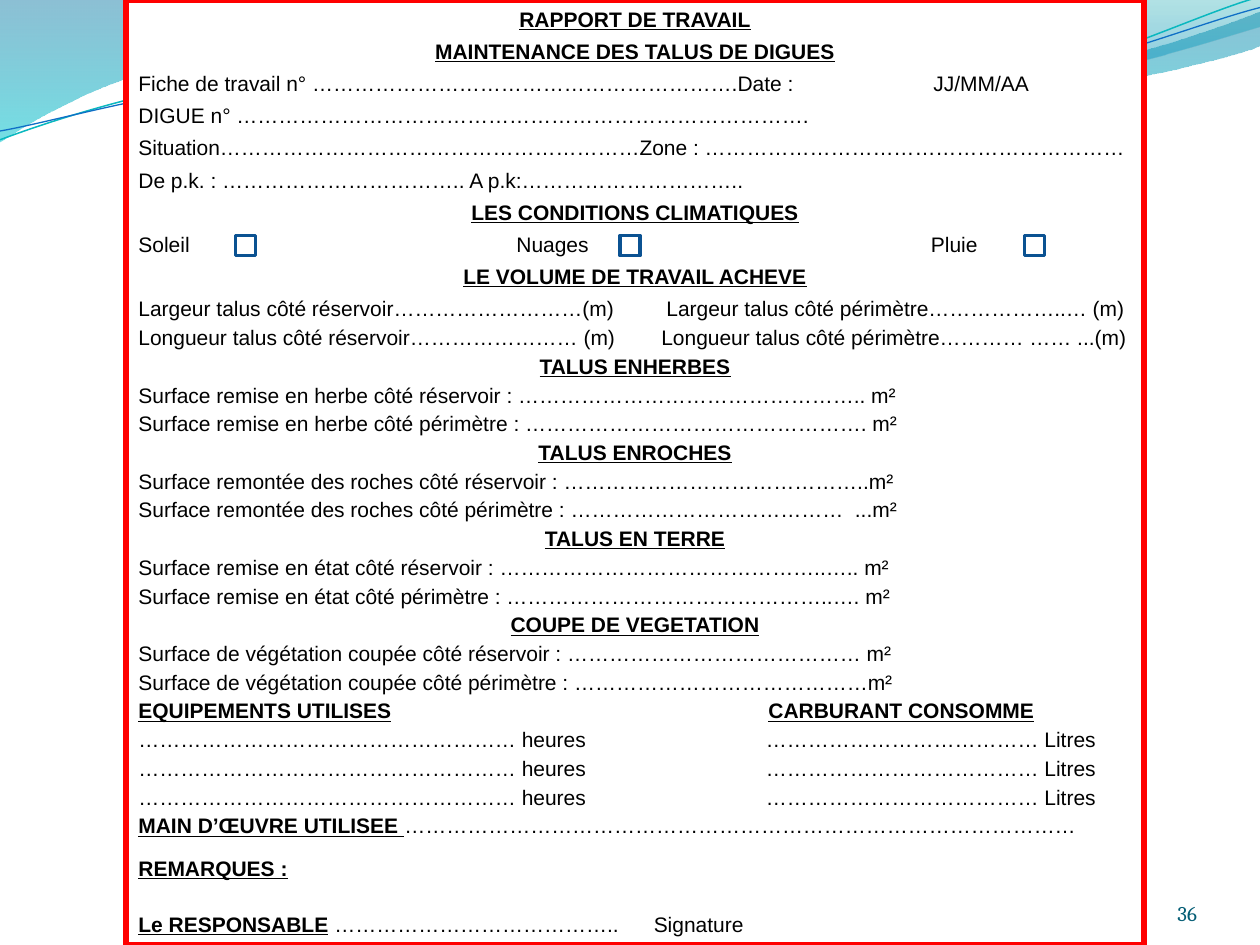
from dataclasses import dataclass

from lxml.etree import SubElement
from pptx import Presentation
from pptx.dml.color import RGBColor
from pptx.enum.shapes import MSO_SHAPE as Shape
from pptx.enum.text import MSO_ANCHOR as Anchor, PP_ALIGN as Align
from pptx.oxml.ns import qn
from pptx.util import Inches, Pt


@dataclass
class Span:
    text: str
    strong: bool = False
    underlined: bool = False


@dataclass
class FormLine:
    spans: list[Span]
    align: Align = Align.JUSTIFY
    after: float = 2
    tabs: tuple[float, ...] = ()


@dataclass
class Wave:
    start: tuple[float, float]
    steps: list[tuple[float, ...]]
    stops: tuple[tuple[float, str, int], ...] = ()
    line: str = ""
    width: float = 0


WAVES = [
    Wave((0, 0), [(4.4, -0.01), (4.76, 0.17, 6.64, 0.63, 7.58, 0.63),
                  (8.53, 0.63, 9.58, 0.26, 10, 0.09), (10.01, 0.36),
                  (9.83, 0.44, 8.7, 0.76, 7.46, 0.75),
                  (6.22, 0.75, 3.82, 0.28, 2.57, 0.34),
                  (1.29, 0.36, 0.46, 0.83, -0.01, 1.13)],
         stops=((0, "0074A1", 45), (1, "00C6CF", 55))),
    Wave((4.79, -0.01), [(5.09, 0.11, 6.82, 0.62, 7.69, 0.65),
                         (8.56, 0.69, 9.61, 0.32, 10, 0.21), (10, 0)],
         stops=((0, "00A1A9", 30), (0.8, "008BBF", 45))),
    Wave((0, 1.11), [(0.48, 0.93, 1.58, 0.57, 2.77, 0.52),
                     (3.95, 0.47, 5.93, 0.89, 7.13, 0.8),
                     (8.33, 0.71, 9.38, 0.15, 9.98, -0.02)],
         line="0AB8BF", width=0.85),
    Wave((0, 1.04), [(0.47, 0.96, 1.64, 0.61, 2.83, 0.56),
                     (4.03, 0.51, 5.97, 0.84, 7.17, 0.75),
                     (8.36, 0.67, 9.41, 0.21, 10, 0.06)],
         line="0F6FC6", width=0.75),
]


def title(text: str, after: float = 2) -> FormLine:
    return FormLine([Span(text, True, True)], Align.CENTER, after)


def entry(text: str, after: float = 2, *tabs: float) -> FormLine:
    return FormLine([Span(text)], after=after, tabs=tabs)


def size_entry(text: str, tab: float) -> FormLine:
    return FormLine([Span(text)], Align.LEFT, tabs=(tab,))


def labelled(label: str, rest: str, after: float, *tabs: float) -> FormLine:
    return FormLine([Span(label, True, True), Span(rest)], after=after, tabs=tabs)


FORM = [
    title("RAPPORT DE TRAVAIL", 4),
    title("MAINTENANCE DES TALUS DE DIGUES", 4),
    entry("Fiche de travail n° …………………………………………………….Date :\tJJ/MM/AA", 4, 6.31),
    entry("DIGUE n° ……………………………………………………………………….", 4),
    entry("Situation……………………………………………………Zone : ……………………………………………………", 4),
    entry("De p.k. : …………………………….. A p.k:…………………………..", 4),
    title("LES CONDITIONS CLIMATIQUES", 4),
    entry("Soleil\tNuages\tPluie", 4, 3, 6.29),
    title("LE VOLUME DE TRAVAIL ACHEVE", 4),
    size_entry("Largeur talus côté réservoir………………………(m)\tLargeur talus côté périmètre………………..… (m)", 4.19),
    size_entry("Longueur talus côté réservoir…………………… (m)\tLongueur talus côté périmètre………… …… ...(m)", 4.15),
    title("TALUS ENHERBES"),
    entry("Surface remise en herbe côté réservoir : ………………………………………….. m²"),
    entry("Surface remise en herbe côté périmètre : …………………………………………. m²"),
    title("TALUS ENROCHES"),
    entry("Surface remontée des roches côté réservoir : ……………………………………..m²"),
    entry("Surface remontée des roches côté périmètre : …………………………………  ...m²"),
    title("TALUS EN TERRE"),
    entry("Surface remise en état côté réservoir : ………………………………………..….. m²"),
    entry("Surface remise en état côté périmètre : ………………………………………..…. m²"),
    title("COUPE DE VEGETATION"),
    entry("Surface de végétation coupée côté réservoir : …………………………………… m²"),
    entry("Surface de végétation coupée côté périmètre : ……………………………………m²"),
    FormLine([Span("EQUIPEMENTS UTILISES", True, True), Span("\t", True),
              Span("CARBURANT CONSOMME", True, True)], Align.LEFT, tabs=(5,)),
    *[entry("……………………………………………… heures\t………………………………… Litres", 2, 4.98)] * 3,
    labelled("MAIN D’ŒUVRE UTILISEE ", "……………………………………………………………………………………", 10),
    FormLine([Span("REMARQUES :", True, True)], after=17.6),
    labelled("Le RESPONSABLE", " …………………………………..\tSignature", 4, 4.09),
]


def colour(value: str) -> RGBColor:
    return RGBColor.from_string(value)


def bend(shape, steps: list[tuple[float, ...]]) -> None:
    lines = list(shape.element.iter(qn("a:lnTo")))
    for step in steps:
        count = len(step) // 2
        corner, lines = lines[:count], lines[count:]
        if count == 3:
            first, *others = corner
            first.tag = qn("a:cubicBezTo")
            for other in others:
                first.append(other[0])
                other.getparent().remove(other)


def draw_wave(page, wave: Wave) -> None:
    builder = page.shapes.build_freeform(*map(Inches, wave.start))
    points = [(Inches(x), Inches(y)) for step in wave.steps
              for x, y in zip(step[::2], step[1::2])]
    builder.add_line_segments(points, close=bool(wave.stops))
    shape = builder.convert_to_shape()
    bend(shape, wave.steps)
    shape.shadow.inherit = False
    if not wave.stops:
        shape.fill.background()
        shape.line.color.rgb = colour(wave.line)
        shape.line.width = Pt(wave.width)
        return
    shape.line.fill.background()
    shape.fill.gradient()
    shape.fill.gradient_angle = 270
    for stop, (position, value, _) in zip(shape.fill.gradient_stops, wave.stops):
        stop.position = position
        stop.color.rgb = colour(value)
    for tint, (_, _, opacity) in zip(shape.element.spPr.iter(qn("a:srgbClr")), wave.stops):
        SubElement(tint, qn("a:alpha"), val=str(opacity * 1000))


def draw_box(page, left: float, top: float, width: float, height: float, line: str, weight: float):
    box = page.shapes.add_shape(Shape.RECTANGLE, Inches(left), Inches(top), Inches(width), Inches(height))
    box.shadow.inherit = False
    box.fill.solid()
    box.fill.fore_color.rgb = colour("FFFFFF")
    box.line.color.rgb = colour(line)
    box.line.width = Pt(weight)
    return box


def write_line(para, line: FormLine) -> None:
    para.alignment = line.align
    para.line_spacing = Pt(14.4)
    para.space_after = Pt(line.after)
    if line.tabs:
        tab_list = SubElement(para._p.get_or_add_pPr(), qn("a:tabLst"))
        for tab in line.tabs:
            SubElement(tab_list, qn("a:tab"), pos=str(Inches(tab)), algn="l")
    for span in line.spans:
        run = para.add_run()
        run.text = span.text
        run.font.name = "Arial"
        run.font.size = Pt(12)
        run.font.bold = span.strong
        run.font.underline = span.underlined
        run.font.color.rgb = colour("000000")


def draw_page_number(page) -> None:
    box = page.shapes.add_textbox(Inches(8.67), Inches(6.95), Inches(0.83), Inches(0.4))
    frame = box.text_frame
    frame.margin_left = frame.margin_right = frame.margin_top = frame.margin_bottom = 0
    frame.word_wrap = True
    frame.vertical_anchor = Anchor.BOTTOM
    frame.text = "36"
    para = frame.paragraphs[0]
    para.alignment = Align.RIGHT
    font = para.runs[0].font
    font.name, font.size = "Cambria", Pt(12)
    font.color.rgb = colour("045D75")


def main() -> None:
    deck = Presentation()
    deck.slide_width, deck.slide_height = Inches(10), Inches(7.5)
    page = deck.slides.add_slide(deck.slide_layouts[6])
    for wave in WAVES:
        draw_wave(page, wave)
    draw_page_number(page)
    frame = draw_box(page, 1, 0, 8.08, 7.5, "FF0000", 3).text_frame
    frame.word_wrap = True
    frame.vertical_anchor = Anchor.TOP
    for index, line in enumerate(FORM):
        write_line(frame.add_paragraph() if index else frame.paragraphs[0], line)
    for left in (1.87, 4.92, 8.13):
        draw_box(page, left, 1.87, 0.16, 0.16, "0B5292", 2)
    deck.save("out.pptx")


if __name__ == "__main__":
    main()
